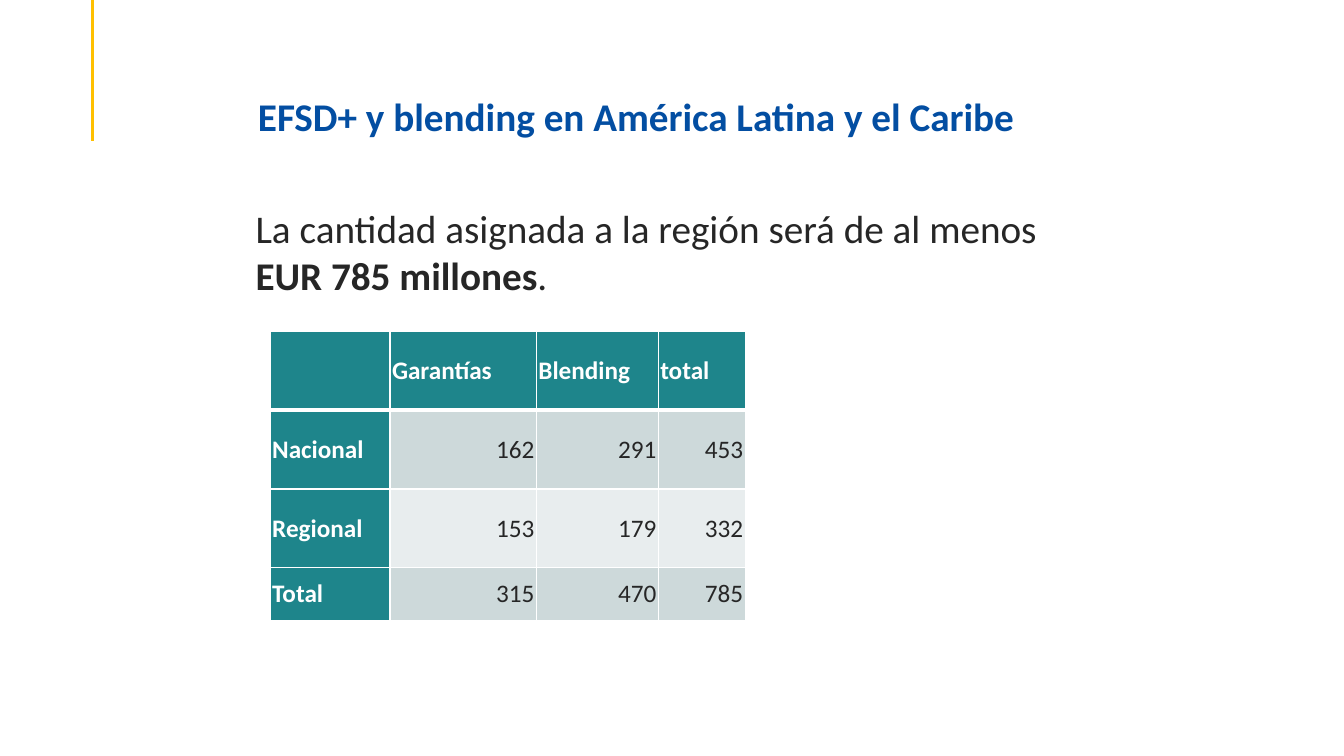
from lxml import etree
from pptx import Presentation
from pptx.dml.color import RGBColor
from pptx.enum.shapes import MSO_CONNECTOR
from pptx.enum.text import MSO_ANCHOR, MSO_AUTO_SIZE, PP_ALIGN
from pptx.oxml import parse_xml
from pptx.oxml.ns import nsdecls, qn
from pptx.util import Cm, Pt

WHITE = RGBColor(0xFF, 0xFF, 0xFF)
GOLD = RGBColor(0xFF, 0xC0, 0x00)
BLUE = RGBColor(0x03, 0x4E, 0xA2)
DARK = RGBColor(0x26, 0x26, 0x26)
TEAL = RGBColor(0x1E, 0x85, 0x8B)
BAND_DARK = RGBColor(0xCD, 0xD9, 0xDA)
BAND_LIGHT = RGBColor(0xE8, 0xED, 0xEE)


def set_font(font, size, color, bold):
    font.name = "Calibri"
    font.size = Pt(size)
    font.color.rgb = color
    font.bold = bold


def add_border(cell, side, points):
    cell_properties = cell._tc.get_or_add_tcPr()
    cell_properties.append(parse_xml(
        f'<a:ln{side} {nsdecls("a")} w="{Pt(points)}"><a:solidFill>'
        f'<a:srgbClr val="{WHITE}"/></a:solidFill></a:ln{side}>'))


presentation = Presentation()
presentation.slide_width = Cm(33.87)
presentation.slide_height = Cm(19.05)
slide = presentation.slides.add_slide(presentation.slide_layouts[5])

accent_line = slide.shapes.add_connector(
    MSO_CONNECTOR.STRAIGHT, Cm(2.34), Cm(0), Cm(2.34), Cm(3.56))
accent_line.line.color.rgb = GOLD
accent_line.line.width = Pt(2.25)
etree.SubElement(accent_line._element.spPr, qn("a:effectLst"))

title = slide.shapes.title
title.left, title.top, title.width, title.height = Cm(6.25), Cm(1.35), Cm(21.9), Cm(2.18)
title_frame = title.text_frame
title_frame.text = "EFSD+ y blending en América Latina y el Caribe"
title_frame.vertical_anchor = MSO_ANCHOR.BOTTOM
title_frame.auto_size = MSO_AUTO_SIZE.NONE
title_frame.margin_left = title_frame.margin_right = Cm(0.25)
title_frame.margin_top = Cm(0.13)
title_frame.margin_bottom = Cm(0)
paragraph = title_frame.paragraphs[0]
paragraph.alignment = PP_ALIGN.LEFT
paragraph.line_spacing = 0.9
set_font(paragraph.font, 28, BLUE, True)

statement = slide.shapes.add_textbox(Cm(6.25), Cm(5.05), Cm(21.51), Cm(2.59))
statement_frame = statement.text_frame
statement_frame.word_wrap = True
statement_frame.vertical_anchor = MSO_ANCHOR.MIDDLE
statement_frame.margin_left = statement_frame.margin_right = Cm(0.19)
statement_frame.margin_top = statement_frame.margin_bottom = Cm(0.1)
paragraph = statement_frame.paragraphs[0]
paragraph.space_after = Pt(4.5)
for text, bold in [("La cantidad asignada a la región será de al menos ", False),
                   ("EUR 785 millones", True), (".", False)]:
    run = paragraph.add_run()
    run.text = text
    set_font(run.font, 28, DARK, bold)

amounts = [
    ["", "Garantías", "Blending", "total"],
    ["Nacional", "162", "291", "453"],
    ["Regional", "153", "179", "332"],
    ["Total", "315", "470", "785"],
]
column_widths = [3.02, 3.69, 3.07, 2.19]
row_heights = [1.99, 1.99, 1.99, 1.32]
table = slide.shapes.add_table(
    4, 4, Cm(6.81), Cm(8.34), Cm(sum(column_widths)), Cm(sum(row_heights))).table
for column, width in zip(table.columns, column_widths):
    column.width = Cm(width)
for row, height in zip(table.rows, row_heights):
    row.height = Cm(height)

for row_index, values in enumerate(amounts):
    for column_index, value in enumerate(values):
        cell = table.cell(row_index, column_index)
        is_header = row_index == 0 or column_index == 0
        cell.text = value
        cell.vertical_anchor = MSO_ANCHOR.MIDDLE
        cell.margin_left = cell.margin_right = Cm(0.05)
        cell.margin_top = cell.margin_bottom = Cm(0)
        for side in "LR":
            add_border(cell, side, 1)
        add_border(cell, "T", 3 if row_index == 1 else 1)
        add_border(cell, "B", 3 if row_index == 0 else 1)
        cell.fill.solid()
        band = BAND_DARK if row_index % 2 else BAND_LIGHT
        cell.fill.fore_color.rgb = TEAL if is_header else band
        paragraph = cell.text_frame.paragraphs[0]
        paragraph.alignment = PP_ALIGN.JUSTIFY if is_header else PP_ALIGN.RIGHT
        paragraph.space_after = Pt(6)
        set_font(paragraph.font, 18, WHITE if is_header else DARK, is_header)

presentation.save("out.pptx")
